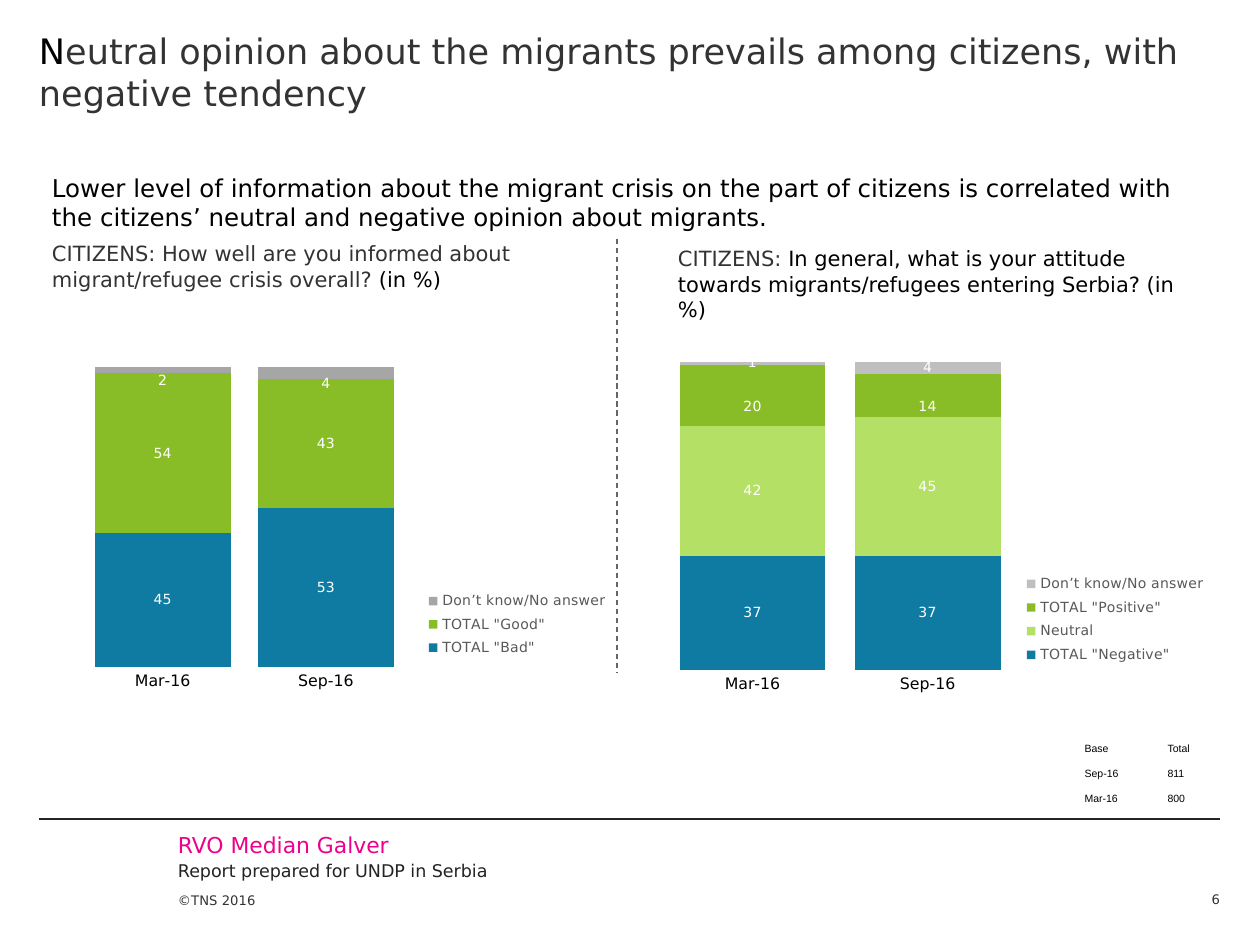
"""Build the slide on citizens' opinion about migrants."""
import dataclasses

import lxml.etree as etree
import pptx
import pptx.chart.data
import pptx.dml.color
import pptx.enum.chart
import pptx.enum.dml
import pptx.enum.shapes
import pptx.enum.text
import pptx.oxml.ns
import pptx.util

qn = pptx.oxml.ns.qn


@dataclasses.dataclass(frozen=True)
class Theme:
    font: str = "DejaVu Sans"
    table_font: str = "Arial"
    black: str = "000000"
    grey: str = "333333"
    rule: str = "262626"
    divider: str = "666666"
    legend: str = "595959"
    footer: str = "232323"
    white: str = "FFFFFF"
    pink: str = "EC008C"
    blue: str = "0F7BA2"
    green: str = "89BD27"
    light_green: str = "B4E066"
    mid_grey: str = "A6A6A6"
    light_grey: str = "BFBFBF"
    title_pt: float = 20
    lead_pt: float = 14
    brand_pt: float = 12.5
    question_pt: float = 12
    report_pt: float = 10
    axis_pt: float = 9
    label_pt: float = 8
    small_pt: float = 7.5
    table_pt: float = 6


def px(n):
    return pptx.util.Emu(round(n * 914400 / 126))


def rgb(color):
    return pptx.dml.color.RGBColor.from_string(color)


def set_layout(parent, index, **values):
    for old in parent.findall(qn("c:layout")):
        parent.remove(old)
    layout = etree.Element(qn("c:layout"))
    manual = etree.SubElement(layout, qn("c:manualLayout"))
    for tag, value in values.items():
        etree.SubElement(manual, qn(f"c:{tag}")).set("val", str(value))
    parent.insert(index, layout)


def edge_box(x, y, w, h):
    return dict(xMode="edge", yMode="edge", x=x, y=y, w=w, h=h)


class SlideBuilder:
    def __init__(self, slide, theme):
        self.s = slide
        self.t = theme

    def style(self, font, size, color, name=None):
        font.name = name or self.t.font
        font.size = pptx.util.Pt(size)
        font.color.rgb = rgb(color)

    def text(self, box, runs, size, insets=(0, 0, 0, 0), anchor="TOP", align="LEFT"):
        sp = self.s.shapes.add_textbox(*map(px, box))
        tf = sp.text_frame
        tf.word_wrap = True
        tf.vertical_anchor = getattr(pptx.enum.text.MSO_ANCHOR, anchor)
        tf.margin_left, tf.margin_top, tf.margin_right, tf.margin_bottom = map(px, insets)
        p = tf.paragraphs[0]
        p.alignment = getattr(pptx.enum.text.PP_ALIGN, align)
        self.style(p.font, size, runs[0][1])
        for content, color in runs:
            r = p.add_run()
            r.text = content
            self.style(r.font, size, color)

    def line(self, x1, y1, x2, y2, color, dashed=False):
        kind = pptx.enum.shapes.MSO_CONNECTOR.STRAIGHT
        sp = self.s.shapes.add_connector(kind, *map(px, (x1, y1, x2, y2)))
        sp.line.color.rgb = rgb(color)
        sp.line.width = pptx.util.Pt(0.75)
        if dashed:
            sp.line.dash_style = pptx.enum.dml.MSO_LINE.DASH
        etree.SubElement(sp._element.spPr, qn("a:effectLst"))

    def chart(self, box, plot_box, legend_box, series, lowered):
        data = pptx.chart.data.CategoryChartData(number_format="0")
        data.categories = ["Sep-16", "Mar-16"]
        for name, values, _ in series:
            data.add_series(name, values)
        kind = pptx.enum.chart.XL_CHART_TYPE.COLUMN_STACKED_100
        chart = self.s.shapes.add_chart(kind, *map(px, box), data).chart
        chart.has_title = False
        self.style(chart.font, self.t.report_pt, self.t.black)

        axis = chart.category_axis
        axis.reverse_order = True
        axis.major_tick_mark = pptx.enum.chart.XL_TICK_MARK.NONE
        axis.format.line.fill.background()
        self.style(axis.tick_labels.font, self.t.axis_pt, self.t.black)
        chart.value_axis.visible = False
        chart.value_axis.has_major_gridlines = False

        chart.has_legend = True
        chart.legend.position = pptx.enum.chart.XL_LEGEND_POSITION.RIGHT
        chart.legend.include_in_layout = False
        self.style(chart.legend.font, self.t.label_pt, self.t.legend)
        set_layout(chart.legend._element, 1, **edge_box(*legend_box))
        plot_area = chart._chartSpace.chart.plotArea
        set_layout(plot_area, 0, layoutTarget="inner", **edge_box(*plot_box))

        plot = chart.plots[0]
        plot.gap_width = 20
        plot.overlap = 100
        plot.vary_by_categories = False
        for ser, (name, values, color) in zip(plot.series, series):
            ser.format.fill.solid()
            ser.format.fill.fore_color.rgb = rgb(color)
            labels = ser.data_labels
            labels.show_value = True
            labels.number_format = "0"
            labels.number_format_is_linked = False
            self.style(labels.font, self.t.label_pt, self.t.white)
            if name == lowered:
                self.lower_labels(ser, len(values))

    def lower_labels(self, ser, count):
        for i in range(count):
            label = ser.points[i].data_label
            label.position = pptx.enum.chart.XL_LABEL_POSITION.CENTER
            self.style(label.font, self.t.label_pt, self.t.white)
        for element in ser._element.xpath("c:dLbls/c:dLbl"):
            set_layout(element, 1, x=0, y=0.024)

    def table(self, x, y, widths, row_height, rows):
        box = (x, y, sum(widths), row_height * len(rows))
        table = self.s.shapes.add_table(len(rows), len(widths), *map(px, box)).table
        table.first_row = table.horz_banding = False
        for column, width in zip(table.columns, widths):
            column.width = px(width)
        for i, row in enumerate(rows):
            table.rows[i].height = px(row_height)
            for j, content in enumerate(row):
                cell = table.cell(i, j)
                cell.fill.background()
                cell.vertical_anchor = pptx.enum.text.MSO_ANCHOR.MIDDLE
                cell.text = content
                p = cell.text_frame.paragraphs[0]
                self.style(p.font, self.t.table_pt, self.t.black, self.t.table_font)


def main():
    prs = pptx.Presentation()
    prs.slide_width, prs.slide_height = px(1260), px(945)
    t = Theme()
    b = SlideBuilder(prs.slides.add_slide(prs.slide_layouts[6]), t)
    padded = (13, 6, 13, 6)

    b.line(39, 819, 1220, 819, t.rule)
    b.text((178, 872, 105, 36), [("©TNS 2016", t.grey)], t.small_pt, anchor="BOTTOM")
    b.text((178, 832, 417, 26), [("RVO Median Galver", t.pink)], t.brand_pt)
    b.text((178, 860, 858, 22), [("Report prepared for UNDP in Serbia", t.footer)], t.report_pt)
    b.text((39, 0, 1181, 142), [
        ("N", t.black),
        ("eutral opinion about the migrants prevails among citizens, with negative tendency", t.grey),
    ], t.title_pt, insets=(0, 29, 0, 0))

    b.chart((53, 363, 563, 447), (0.05, 0.01, 0.58, 0.67), (0.66, 0.5, 0.33, 0.17), [
        ('TOTAL "Bad"', (53, 45), t.blue),
        ('TOTAL "Good"', (43, 54), t.green),
        ("Don’t know/No answer", (4, 2), t.mid_grey),
    ], lowered="Don’t know/No answer")
    b.chart((665, 348, 556, 460), (0, 0.03, 0.63, 0.67), (0.64, 0.48, 0.34, 0.22), [
        ('TOTAL "Negative"', (37, 37), t.blue),
        ("Neutral", (45, 42), t.light_green),
        ('TOTAL "Positive"', (14, 20), t.green),
        ("Don’t know/No answer", (4, 1), t.light_grey),
    ], lowered='TOTAL "Positive"')
    b.line(617, 239, 617, 673, t.divider, dashed=True)

    b.text((39, 235, 626, 105), [
        ("CITIZENS: How well are you informed about migrant/refugee crisis overall? ", t.grey),
        ("(in %)", t.black),
    ], t.question_pt, insets=(13, 6, 100, 6))
    b.text((665, 240, 554, 105), [
        ("CITIZENS: ", t.grey),
        ("In general, what is your attitude towards migrants/refugees entering Serbia? (in %)", t.black),
    ], t.question_pt, insets=padded)
    b.text((39, 167, 1179, 72), [
        ("Lower level of information about the migrant crisis on the part of citizens is correlated "
         "with the citizens’ neutral and negative opinion about migrants.", t.black),
    ], t.lead_pt, insets=padded)
    b.text((1150, 872, 70, 35), [("6", t.grey)], t.small_pt, anchor="BOTTOM", align="RIGHT")
    b.table(1072, 736, (83, 64), 25, [("Base", "Total"), ("Sep-16", "811"), ("Mar-16", "800")])

    prs.save("out.pptx")


if __name__ == "__main__":
    main()
